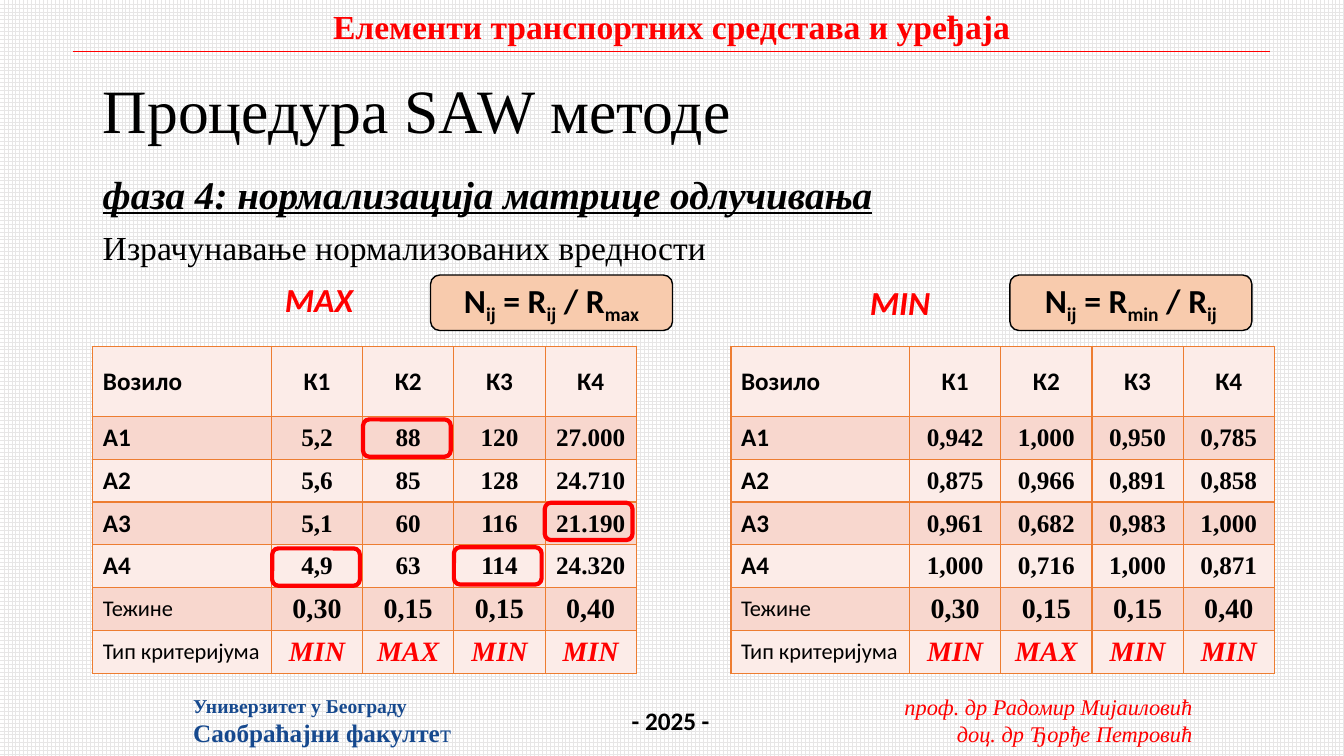
from lxml import etree
from pptx import Presentation
from pptx.dml.color import RGBColor
from pptx.enum.dml import MSO_PATTERN
from pptx.enum.shapes import MSO_CONNECTOR, MSO_SHAPE
from pptx.enum.text import MSO_ANCHOR, MSO_AUTO_SIZE, PP_ALIGN
from pptx.oxml import parse_xml
from pptx.oxml.ns import nsdecls, qn
from pptx.util import Cm, Pt

LEFT, MID, RIGHT = PP_ALIGN.LEFT, PP_ALIGN.CENTER, PP_ALIGN.RIGHT
CENTER = MSO_ANCHOR.MIDDLE
ROUND = MSO_SHAPE.ROUNDED_RECTANGLE
LINE = MSO_CONNECTOR.STRAIGHT
GRID = MSO_PATTERN.LARGE_GRID
GROW = MSO_AUTO_SIZE.SHAPE_TO_FIT_TEXT

BLACK = RGBColor(0x00, 0x00, 0x00)
WHITE = RGBColor(0xFF, 0xFF, 0xFF)
GREY = RGBColor(0xE7, 0xE6, 0xE6)
RED = RGBColor(0xFF, 0x00, 0x00)
BLUE = RGBColor(0x16, 0x49, 0x8E)
PEACH = RGBColor(0xF8, 0xCB, 0xAD)
BANDS = RGBColor(0xFC, 0xEC, 0xE8), RGBColor(0xF8, 0xD7, 0xCE)
EDGE = "ED7D31"
SERIF, SANS = "Times New Roman", "Calibri"

WIDTHS = [4.5] + [2.3] * 4
HEIGHTS = [1.75] + [1.08] * 6
HEAD = ["Возило", "К1", "К2", "К3", "К4"]
FOOT = [
    ["Тежине", "0,30", "0,15", "0,15", "0,40"],
    ["Тип критеријума", "MIN", "MAX", "MIN", "MIN"],
]
RAW = [
    ["А1", "5,2", "88", "120", "27.000"],
    ["А2", "5,6", "85", "128", "24.710"],
    ["А3", "5,1", "60", "116", "21.190"],
    ["А4", "4,9", "63", "114", "24.320"],
]
NORMAL = [
    ["А1", "0,942", "1,000", "0,950", "0,785"],
    ["А2", "0,875", "0,966", "0,891", "0,858"],
    ["А3", "0,961", "0,682", "0,983", "1,000"],
    ["А4", "1,000", "0,716", "1,000", "0,871"],
]
MARKS = [13.82, 10.57, 13.79, 12.67]


class Board:
    def __init__(self, deck):
        self.slide = deck.slides.add_slide(deck.slide_layouts[5])
        self.shapes = self.slide.shapes
        fill = self.slide.background.fill
        fill.patterned()
        fill.pattern = GRID
        fill.fore_color.rgb = GREY
        fill.back_color.rgb = WHITE

    def style(self, par, size, face=SERIF, color=BLACK, bold=False,
              slant=False, align=LEFT):
        par.alignment = align
        font = par.font
        font.size, font.name = Pt(size), face
        font.bold, font.italic = bold, slant
        font.color.rgb = color

    def title(self, box, text):
        shape = self.shapes.title
        shape.left, shape.top, shape.width, shape.height = map(Cm, box)
        frame = shape.text_frame
        frame.text = text
        frame.vertical_anchor = CENTER
        par = frame.paragraphs[0]
        par.line_spacing = 0.9
        self.style(par, 44)

    def text(self, box, lines, wrap=False, **look):
        frame = self.shapes.add_textbox(*map(Cm, box)).text_frame
        frame.word_wrap = wrap
        if not wrap:
            frame.auto_size = GROW
        for i, (text, size) in enumerate(lines):
            par = frame.add_paragraph() if i else frame.paragraphs[0]
            par.text = text
            self.style(par, size, **look)
        return frame.paragraphs

    def rule(self, x, y, end):
        line = self.shapes.add_connector(LINE, Cm(x), Cm(y), Cm(end), Cm(y))
        line.line.color.rgb = RED
        line.line.width = Pt(0.5)
        etree.SubElement(line._element.spPr, qn("a:effectLst"))

    def frame(self, box, color, width):
        shape = self.shapes.add_shape(ROUND, *map(Cm, box))
        shape.shadow.inherit = False
        shape.fill.background()
        shape.line.color.rgb = color
        shape.line.width = Pt(width)
        return shape

    def formula(self, x, parts):
        shape = self.frame((x, 6.93, 6.1, 1.4), BLACK, 1)
        shape.fill.solid()
        shape.fill.fore_color.rgb = PEACH
        shape.text_frame.vertical_anchor = CENTER
        par = shape.text_frame.paragraphs[0]
        self.style(par, 24, SANS, bold=True, align=MID)
        for i, part in enumerate(parts):
            run = par.add_run()
            run.text = part
            if i % 2:
                run._r.get_or_add_rPr().set("baseline", "-25000")

    def border(self, cell):
        props = cell._tc.get_or_add_tcPr()
        for side in ("lnL", "lnR", "lnT", "lnB"):
            props.append(parse_xml(
                f'<a:{side} {nsdecls("a")} w="12700"><a:solidFill>'
                f'<a:srgbClr val="{EDGE}"/></a:solidFill></a:{side}>'))

    def cell(self, cell, text, row, col):
        self.border(cell)
        cell.fill.solid()
        cell.fill.fore_color.rgb = BANDS[row % 2]
        cell.vertical_anchor = CENTER
        cell.text = text
        par = cell.text_frame.paragraphs[0]
        if col and row:
            cell.margin_left = cell.margin_right = Cm(0.18)
            cell.margin_top = cell.margin_bottom = 0
            self.style(par, 20 if row > 4 else 18, SERIF,
                       RED if row == 6 else BLACK, True, row == 6, MID)
        else:
            self.style(par, 16 if row > 4 else 18, SANS, bold=row < 5,
                       align=MID if col else LEFT)

    def table(self, x, body):
        rows = [HEAD] + body + FOOT
        table = self.shapes.add_table(
            len(rows), len(HEAD), Cm(x), Cm(8.74),
            Cm(sum(WIDTHS)), Cm(sum(HEIGHTS))).table
        table.first_row = table.horz_banding = False
        for col, width in zip(table.columns, WIDTHS):
            col.width = Cm(width)
        for r, row in enumerate(rows):
            table.rows[r].height = Cm(HEIGHTS[r])
            for c, text in enumerate(row):
                self.cell(table.cell(r, c), text, r, c)


def main():
    deck = Presentation()
    deck.slide_width, deck.slide_height = Cm(33.87), Cm(19.05)
    board = Board(deck)

    board.text((22.43, 17.35, 7.87, 1.63),
               [("проф. др Радомир Мијаиловић", 16),
                ("доц. др Ђорђе Петровић", 16)],
               color=RED, slant=True, align=RIGHT)
    board.rule(1.83, 1.3, 32)
    board.text((8.05, 0.03, 17.75, 1.27),
               [("Елементи транспортних средстава и уређаја", 24)],
               color=RED, bold=True, align=MID)
    board.text((15.67, 17.65, 2.49, 1.02), [("- 2025 -", 18)],
               face=SANS, bold=True)
    school = board.text((4.62, 17.35, 7.09, 1.63),
                        [("Универзитет у Београду", 14),
                         ("Саобраћајни факулте", 18)],
                        color=BLUE, bold=True)
    tail = school[1].add_run()
    tail.text = "т"
    tail.font.bold = False

    board.title((2.34, 1.02, 29.21, 3.68), "Процедура SAW методе")
    phase, note = board.text(
        (2.34, 4.29, 29.21, 12.85),
        [("фаза 4: нормализација матрице одлучивања", 28),
         ("Израчунавање нормализованих вредности", 24)], wrap=True)
    phase.line_spacing = note.line_spacing = 0.9
    note.space_before = Pt(10)
    phase.font.bold = phase.font.italic = phase.font.underline = True

    board.table(2.34, RAW)
    board.formula(10.85, ["N", "ij", " = R", "ij", " / R", "max"])
    board.formula(25.45, ["N", "ij", " = R", "min", " / R", "ij"])
    for box, label in (((6.93, 6.91, 2.26, 1.27), "MAX"),
                       ((21.67, 6.99, 2.06, 1.27), "MIN")):
        board.text(box, [(label, 24)], face=SANS, color=RED,
                   bold=True, slant=True)
    for i, top in enumerate(MARKS):
        board.frame((6.86 + 2.29 * i, top, 2.21, 0.94), RED, 3)
    board.table(18.42, NORMAL)

    deck.save("out.pptx")


if __name__ == "__main__":
    main()
